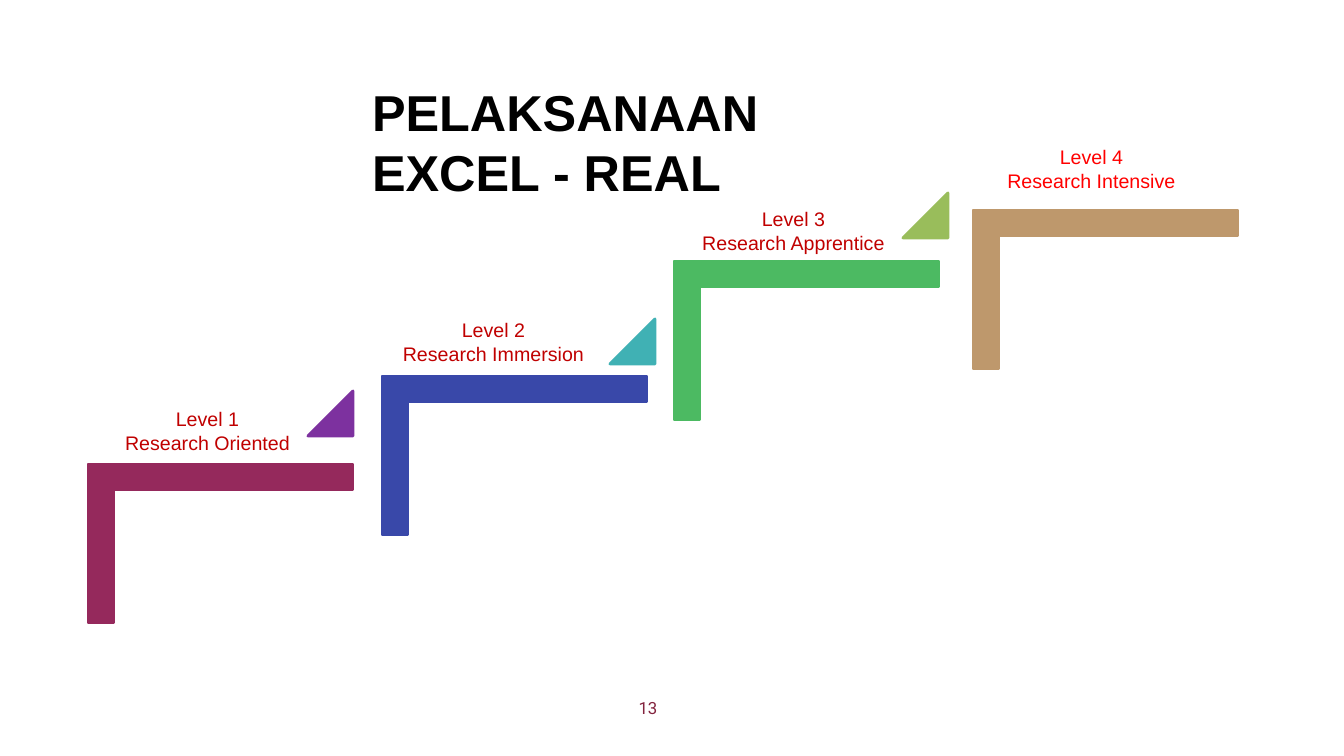
from pptx import Presentation
from pptx.dml.color import RGBColor
from pptx.enum.shapes import MSO_SHAPE as SHAPE
from pptx.enum.text import MSO_ANCHOR as ANCHOR, MSO_AUTO_SIZE as AUTO, PP_ALIGN as ALIGN
from pptx.util import Emu, Pt

TITLE = "PELAKSANAAN EXCEL - REAL"
TITLE_BOX = (362, 76, 541, 132)
PAGE, PAGE_BOX = "13", (497, 688, 302, 40)
STEP_W, STEP_H, STEP_ADJ = 265, 159, 0.161
ARROW = 45
STEPS = [
    {"text": "Level 1\nResearch Oriented", "ink": "C00000", "box": (85, 402, 245, 72),
     "at": (88, 464), "fill": "95295C", "arrow": (308, 391, "7D319F")},
    {"text": "Level 2\nResearch Immersion", "ink": "C00000", "box": (375, 313, 237, 72),
     "at": (382, 376), "fill": "3948A9", "arrow": (610, 319, "40B1B4")},
    {"text": "Level 3\nResearch Apprentice", "ink": "C00000", "box": (665, 202, 257, 72),
     "at": (674, 261), "fill": "4CBA62", "arrow": (903, 193, "99BD5B")},
    {"text": "Level 4\nResearch Intensive", "ink": "FF0000", "box": (969, 140, 245, 57),
     "at": (973, 210), "fill": "BE986C", "arrow": None},
]


def px(n):
    return Emu(round(n * 914400 / 100.8))


def color(code):
    return RGBColor.from_string(code)


def add_solid(s, kind, box, fill, adj):
    sp = s.shapes.add_shape(kind, *map(px, box))
    sp.shadow.inherit = False
    sp.fill.solid()
    sp.fill.fore_color.rgb = sp.line.color.rgb = color(fill)
    sp.line.width = Pt(2)
    for i, value in enumerate(adj):
        sp.adjustments[i] = value
    return sp


def write(sp, text, size, ink, font="Arial", bold=False, align=ALIGN.CENTER, anchor=ANCHOR.TOP):
    tf = sp.text_frame
    tf.text = text
    tf.word_wrap = True
    tf.auto_size = AUTO.NONE
    tf.vertical_anchor = anchor
    for p in tf.paragraphs:
        p.alignment = align
        p.font.name, p.font.size, p.font.bold = font, Pt(size), bold
        p.font.color.rgb = color(ink)


def main():
    """Build the staircase slide and save it."""
    prs = Presentation()
    prs.slide_width, prs.slide_height = px(1344), px(756)
    s = prs.slides.add_slide(prs.slide_layouts[5])

    for step in STEPS:
        x, y = step["at"]
        shift = (STEP_W - STEP_H) / 2
        sp = add_solid(s, SHAPE.CORNER, (x + shift, y - shift, STEP_H, STEP_W),
                       step["fill"], (STEP_ADJ, STEP_ADJ))
        sp.rotation = 90
        if step["arrow"]:
            left, top, fill = step["arrow"]
            add_solid(s, SHAPE.ISOSCELES_TRIANGLE, (left, top, ARROW, ARROW), fill, (1,))

    for step in STEPS:
        label = s.shapes.add_textbox(*map(px, step["box"]))
        write(label, step["text"], 14, step["ink"])

    title = s.shapes.title
    title.left, title.top, title.width, title.height = map(px, TITLE_BOX)
    write(title, TITLE, 36, "000000", bold=True, align=ALIGN.LEFT)

    page = s.shapes.add_textbox(*map(px, PAGE_BOX))
    write(page, PAGE, 12, "83233E", font="Roboto", anchor=ANCHOR.MIDDLE)
    prs.save("out.pptx")


if __name__ == "__main__":
    main()
